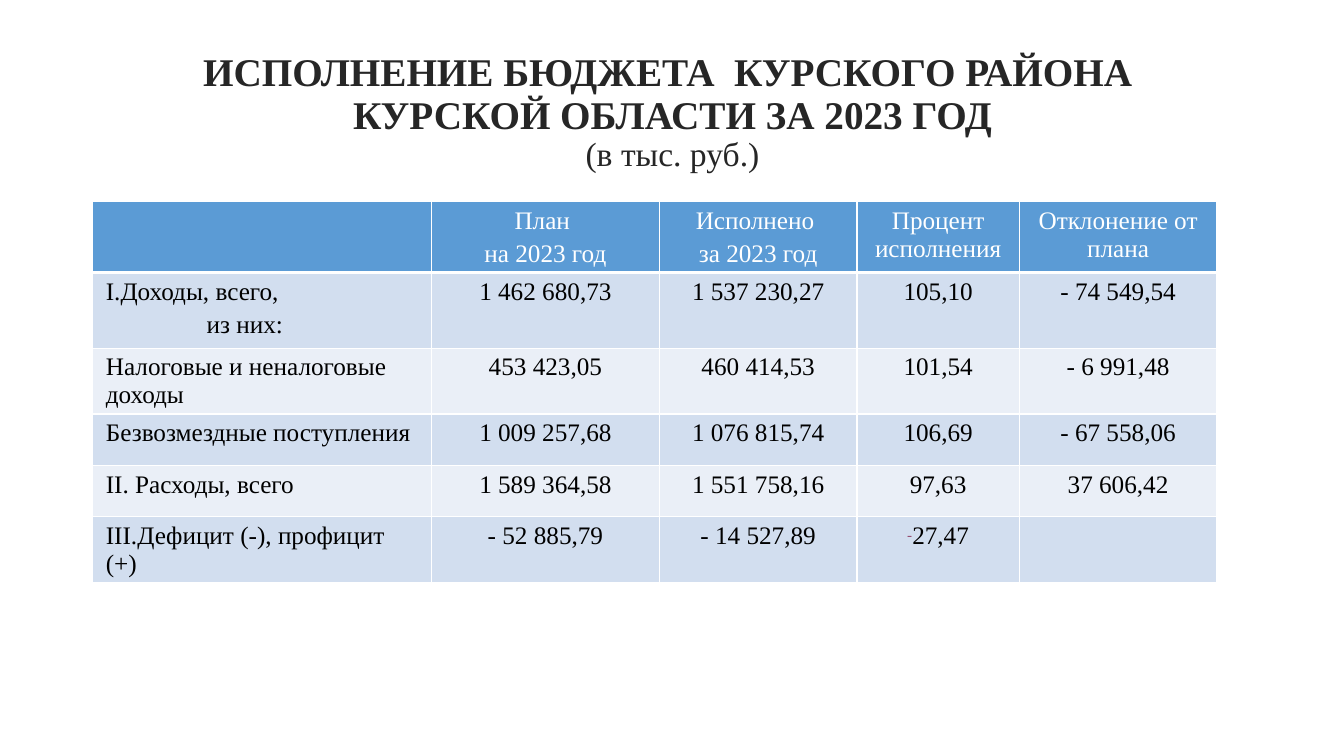
from lxml.etree import SubElement
from pptx import Presentation
from pptx.dml.color import RGBColor
from pptx.enum.text import MSO_ANCHOR, PP_ALIGN
from pptx.oxml.ns import qn
from pptx.util import Inches, Pt

FONT = "Times New Roman"
COLORS = {
    "title": "262626",
    "header": "5B9BD5",
    "odd": "D2DEEF",
    "even": "EAEFF7",
    "white": "FFFFFF",
    "black": "000000",
    "bullet": "954F72",
}
COLUMN_WIDTHS = [3.36, 2.26, 1.96, 1.61, 1.96]
ROW_HEIGHTS = [0.52, 0.75, 0.53, 0.51, 0.51, 0.51]
BUDGET = [
    ["", "План \nна 2023 год", "Исполнено \nза 2023 год", "Процент исполнения", "Отклонение от плана"],
    ["I.Доходы, всего,\nиз них:", "1 462 680,73", "1 537 230,27", "105,10", "- 74 549,54"],
    ["Налоговые и неналоговые доходы", "453 423,05", "460 414,53", "101,54", "- 6 991,48"],
    ["Безвозмездные поступления", "1 009 257,68", "1 076 815,74", "106,69", "- 67 558,06"],
    ["II. Расходы, всего", "1 589 364,58", "1 551 758,16", "97,63", "37 606,42"],
    ["III.Дефицит (-), профицит (+)", "- 52 885,79", "- 14 527,89", "27,47", ""],
]


def color(name):
    return RGBColor.from_string(COLORS[name])


def add_run(paragraph, text, size, color_name, bold=False):
    run = paragraph.add_run()
    run.text = text
    run.font.name = FONT
    run.font.size = Pt(size)
    run.font.bold = bold
    run.font.color.rgb = color(color_name)


def add_title(slide):
    title = slide.shapes.title
    title.left, title.top = Inches(0.92), Inches(0.4)
    title.width, title.height = Inches(11.5), Inches(1.45)
    frame = title.text_frame
    frame.word_wrap = True
    frame.vertical_anchor = MSO_ANCHOR.MIDDLE
    paragraph = frame.paragraphs[0]
    paragraph.alignment = PP_ALIGN.CENTER
    paragraph.line_spacing = 0.9
    for line in ["ИСПОЛНЕНИЕ БЮДЖЕТА  КУРСКОГО РАЙОНА ", "КУРСКОЙ ОБЛАСТИ ЗА 2023 ГОД"]:
        add_run(paragraph, line, 28, "title", bold=True)
        paragraph.add_line_break()
    add_run(paragraph, "(в тыс. руб.)", 24, "title")


def set_borders(cell, bottom_width):
    properties = cell._tc.get_or_add_tcPr()
    for side, width in [("L", 1), ("R", 1), ("T", 1), ("B", bottom_width)]:
        line = SubElement(properties, qn(f"a:ln{side}"), w=str(Pt(width)))
        fill = SubElement(line, qn("a:solidFill"))
        SubElement(fill, qn("a:srgbClr"), val=COLORS["white"])


def set_left_indent(paragraph, length):
    properties = paragraph._p.get_or_add_pPr()
    properties.set("marL", str(length))
    properties.set("indent", "0")


def add_dash_bullet(paragraph):
    set_left_indent(paragraph, 0)
    properties = paragraph._p.get_or_add_pPr()
    bullet_color = SubElement(properties, qn("a:buClr"))
    SubElement(bullet_color, qn("a:srgbClr"), val=COLORS["bullet"])
    SubElement(properties, qn("a:buSzPct"), val="60000")
    SubElement(properties, qn("a:buFont"), typeface=FONT)
    SubElement(properties, qn("a:buChar"), char="-")


def fill_cell(cell, text, fill_name, text_color, alignment):
    cell.margin_left = cell.margin_right = Inches(0.13)
    cell.margin_top = cell.margin_bottom = Inches(0.05)
    cell.fill.solid()
    cell.fill.fore_color.rgb = color(fill_name)
    if not text:
        return
    frame = cell.text_frame
    for index, line in enumerate(text.split("\n")):
        paragraph = frame.add_paragraph() if index else frame.paragraphs[0]
        paragraph.alignment = alignment
        paragraph.space_before = Pt(3.6)
        add_run(paragraph, line, 18, text_color)


def add_budget_table(slide):
    frame = slide.shapes.add_table(
        len(BUDGET), len(COLUMN_WIDTHS), Inches(0.92), Inches(2),
        Inches(sum(COLUMN_WIDTHS)), Inches(sum(ROW_HEIGHTS)),
    )
    table = frame.table
    for column, width in zip(table.columns, COLUMN_WIDTHS):
        column.width = Inches(width)
    for row, height in zip(table.rows, ROW_HEIGHTS):
        row.height = Inches(height)
    for row_index, texts in enumerate(BUDGET):
        is_header = row_index == 0
        fill_name = "header" if is_header else "odd" if row_index % 2 else "even"
        text_color = "white" if is_header else "black"
        for column_index, text in enumerate(texts):
            cell = table.cell(row_index, column_index)
            alignment = PP_ALIGN.CENTER if column_index else PP_ALIGN.LEFT
            set_borders(cell, 3 if is_header else 1)
            fill_cell(cell, text, fill_name, text_color, alignment)
    set_left_indent(table.cell(1, 0).text_frame.paragraphs[1], Inches(1))
    add_dash_bullet(table.cell(5, 3).text_frame.paragraphs[0])


def main():
    presentation = Presentation()
    presentation.slide_width = Inches(13.33)
    presentation.slide_height = Inches(7.5)
    slide = presentation.slides.add_slide(presentation.slide_layouts[5])
    slide.background.fill.solid()
    slide.background.fill.fore_color.rgb = color("white")
    add_title(slide)
    add_budget_table(slide)
    presentation.save("out.pptx")


if __name__ == "__main__":
    main()
